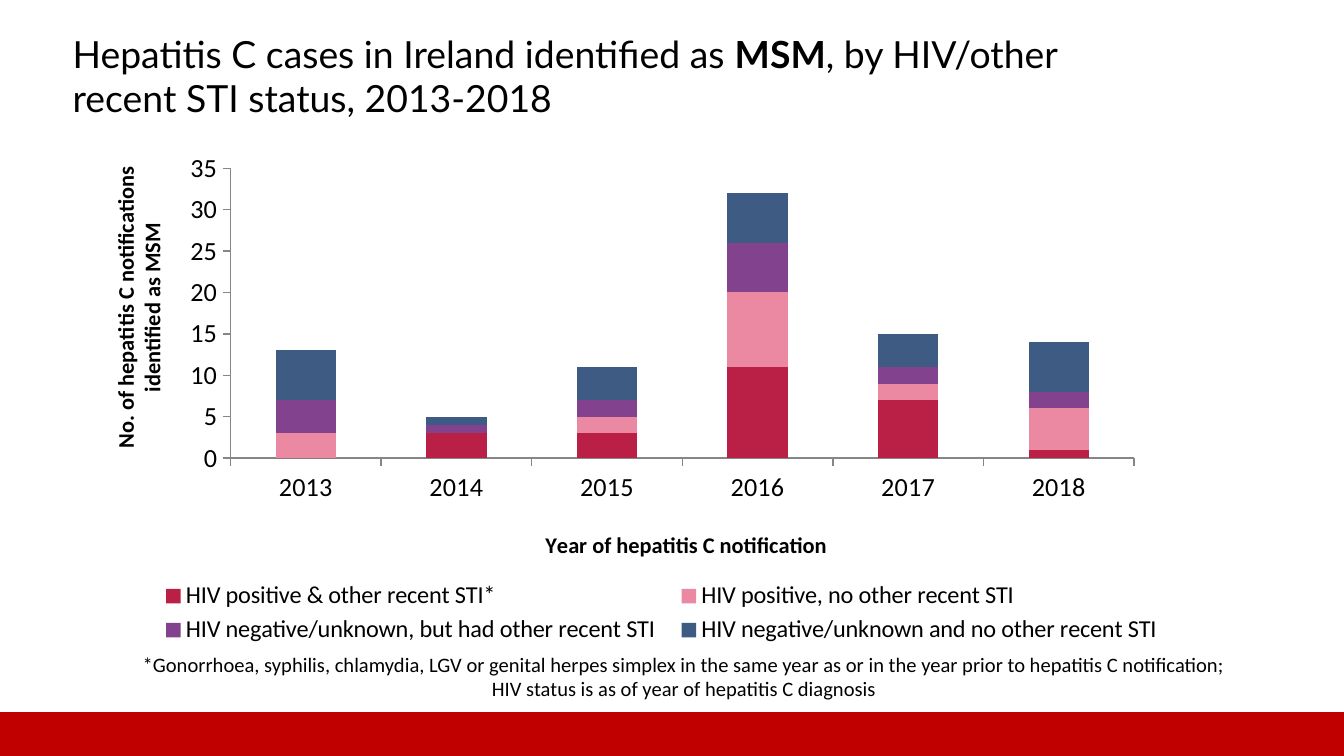
import dataclasses

import pptx
import pptx.chart.data
import pptx.dml.color
import pptx.enum.chart
import pptx.enum.shapes
import pptx.enum.text
import pptx.oxml
import pptx.oxml.ns
import pptx.util


@dataclasses.dataclass(frozen=True)
class Theme:
    heading_font: str = "Lato"
    body_font: str = "Calibri"
    ink: str = "000000"
    band: str = "C00000"
    axis: str = "868686"
    series: tuple = ("BA1F46", "EB89A3", "82428D", "3E5B84")
    title_size: int = 20
    tick_size: int = 14
    legend_size: int = 13
    axis_title_size: int = 12
    note_size: int = 11


class SlideBuilder:
    """Holds the style and the current slide; places are shares of its size."""

    def __init__(self, deck, theme):
        self.deck, self.theme = deck, theme
        self.page = deck.slides.add_slide(deck.slide_layouts.get_by_name("Title Only"))

    def area(self, left, top, width, height):
        across, down = self.deck.slide_width, self.deck.slide_height
        return [round(share * length) for share, length in
                zip((left, top, width, height), (across, down, across, down))]

    def color(self, code):
        return pptx.dml.color.RGBColor.from_string(code)

    def style(self, font, size, name=None, bold=False):
        font.name = name or self.theme.body_font
        font.size = pptx.util.Pt(size)
        font.bold = bold
        font.color.rgb = self.color(self.theme.ink)

    def band(self, *place):
        band = self.page.shapes.add_shape(
            pptx.enum.shapes.MSO_SHAPE.RECTANGLE, *self.area(*place))
        band.shadow.inherit = False
        band.fill.solid()
        band.fill.fore_color.rgb = self.color(self.theme.band)
        band.line.color.rgb = self.color(self.theme.band)
        band.line.width = pptx.util.Pt(2)

    def title(self, spans, *place):
        box = self.page.shapes.title
        box.left, box.top, box.width, box.height = self.area(*place)
        frame = box.text_frame
        frame.auto_size = pptx.enum.text.MSO_AUTO_SIZE.NONE
        frame.vertical_anchor = pptx.enum.text.MSO_ANCHOR.MIDDLE
        para = frame.paragraphs[0]
        para.alignment = pptx.enum.text.PP_ALIGN.LEFT
        self.style(para.font, self.theme.title_size, self.theme.heading_font)
        for text, bold in spans:
            span = para.add_run()
            span.text = text
            span.font.bold = bold

    def note(self, lines, *place):
        frame = self.page.shapes.add_textbox(*self.area(*place)).text_frame
        frame.word_wrap = True
        frame.margin_left = frame.margin_right = pptx.util.Inches(0.07)
        frame.margin_top = frame.margin_bottom = pptx.util.Inches(0.04)
        frame.text = "\n".join(lines)
        for para in frame.paragraphs:
            para.alignment = pptx.enum.text.PP_ALIGN.CENTER
            self.style(para.font, self.theme.note_size)

    def pin(self, part, position, inner=False, **shares):
        """Fix a chart part at shares of the chart's size."""
        for old in part.findall(pptx.oxml.ns.qn("c:layout")):
            part.remove(old)
        target = '<c:layoutTarget val="inner"/>' if inner else ""
        modes = "".join(f'<c:{key}Mode val="edge"/>' for key in "xy")
        values = "".join(f'<c:{key} val="{value}"/>' for key, value in shares.items())
        part.insert(position, pptx.oxml.parse_xml(
            f'<c:layout {pptx.oxml.ns.nsdecls("c")}><c:manualLayout>'
            f"{target}{modes}{values}</c:manualLayout></c:layout>"))

    def axis(self, axis, title, x, y):
        axis.has_major_gridlines = False
        axis.major_tick_mark = pptx.enum.chart.XL_TICK_MARK.OUTSIDE
        axis.minor_tick_mark = pptx.enum.chart.XL_TICK_MARK.NONE
        axis.format.line.color.rgb = self.color(self.theme.axis)
        self.style(axis.tick_labels.font, self.theme.tick_size)
        frame = axis.axis_title.text_frame
        frame.text = title
        for para in frame.paragraphs:
            self.style(para.font, self.theme.axis_title_size, bold=True)
        part = axis.axis_title._element
        self.pin(part, 1, x=x, y=y)
        return part

    def stacked_columns(self, categories, rows, axis_titles, *place):
        data = pptx.chart.data.CategoryChartData()
        data.categories = categories
        for name, values in rows.items():
            data.add_series(name, values)
        chart = self.page.shapes.add_chart(
            pptx.enum.chart.XL_CHART_TYPE.COLUMN_STACKED, *self.area(*place), data).chart
        chart.has_title = False
        self.style(chart.font, 10)

        # Columns
        plot = chart.plots[0]
        plot.gap_width, plot.overlap, plot.vary_by_categories = 150, 100, False
        for series, code in zip(plot.series, self.theme.series):
            series.format.fill.solid()
            series.format.fill.fore_color.rgb = self.color(code)
        plot_area = chart._chartSpace.find(".//" + pptx.oxml.ns.qn("c:plotArea"))
        self.pin(plot_area, 0, inner=True, x=0.123, y=0.051, w=0.791, h=0.563)

        # Axes
        self.axis(chart.category_axis, axis_titles[0], 0.395, 0.745)
        upright = self.axis(chart.value_axis, axis_titles[1], 0.014, 0.04)
        body = upright.find(".//" + pptx.oxml.ns.qn("a:bodyPr"))
        body.set("rot", "-5400000")
        body.set("vert", "horz")
        chart.value_axis.minimum_scale = 0
        chart.value_axis.maximum_scale = 35
        chart.value_axis.major_unit = 5

        # Legend
        chart.has_legend = True
        chart.legend.position = pptx.enum.chart.XL_LEGEND_POSITION.BOTTOM
        chart.legend.include_in_layout = False
        self.style(chart.legend.font, self.theme.legend_size)
        self.pin(chart.legend._element, 1, x=0.05, y=0.845, w=0.9, h=0.14)


def main():
    deck = pptx.Presentation()
    deck.slide_width = pptx.util.Inches(10)
    deck.slide_height = pptx.util.Inches(5.625)
    slide = SlideBuilder(deck, Theme())

    slide.band(0, 0.944, 1, 0.056)
    slide.title(
        [("Hepatitis C cases in Ireland identified as ", False), ("MSM", True),
         (", by HIV/other recent STI status, 2013-2018", False)],
        0.044, 0.045, 0.831, 0.11)
    slide.stacked_columns(
        [str(year) for year in range(2013, 2019)],
        {"HIV positive & other recent STI*": (0, 3, 3, 11, 7, 1),
         "HIV positive, no other recent STI": (3, 0, 2, 9, 2, 5),
         "HIV negative/unknown, but had other recent STI": (4, 1, 2, 6, 2, 2),
         "HIV negative/unknown and no other recent STI": (6, 1, 4, 6, 4, 6)},
        ("Year of hepatitis C notification",
         "No. of hepatitis C notifications\nidentified as MSM"),
        0.067, 0.188, 0.85, 0.681)
    slide.note(
        ["*Gonorrhoea, syphilis, chlamydia, LGV or genital herpes simplex in the same "
         "year as or in the year prior to hepatitis C notification;",
         "HIV status is as of year of hepatitis C diagnosis"],
        0.067, 0.855, 0.884, 0.082)
    deck.save("out.pptx")


if __name__ == "__main__":
    main()
